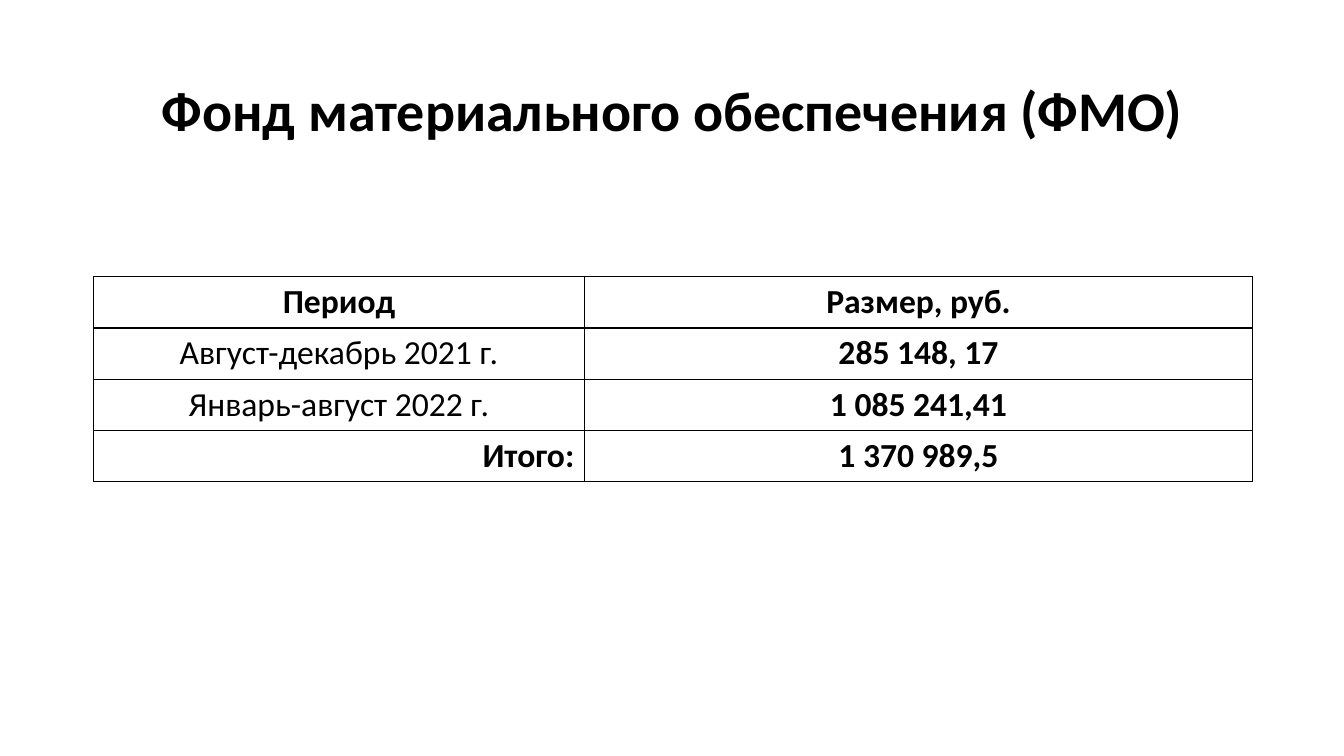
from lxml.etree import SubElement
from pptx import Presentation
from pptx.dml.color import RGBColor
from pptx.enum.text import MSO_ANCHOR as Anchor, PP_ALIGN as Align
from pptx.oxml.ns import qn
from pptx.util import Pt


def color(code):
    return RGBColor.from_string(code)


class Page:
    font = "Calibri"
    ink = "000000"
    paper = "FFFFFF"

    def __init__(self, deck):
        self.slide = deck.slides.add_slide(deck.slide_layouts[5])

    def label(self, frame, text, size, bold=True, align=Align.CENTER):
        para = frame.paragraphs[0]
        para.text = text
        para.alignment = align
        font = para.runs[0].font
        font.name, font.size, font.bold = self.font, Pt(size), bold
        font.color.rgb = color(self.ink)
        return para

    def title(self, text, left, top, width, height):
        box = self.slide.shapes.title
        box.left, box.top = Pt(left), Pt(top)
        box.width, box.height = Pt(width), Pt(height)
        frame = box.text_frame
        frame.word_wrap = True
        frame.vertical_anchor = Anchor.MIDDLE
        self.label(frame, text, 40).line_spacing = 0.9

    def border(self, cell):
        """Draw a thin solid line on all four sides of the cell."""
        props = cell._tc.get_or_add_tcPr()
        for spot, side in enumerate(("lnL", "lnR", "lnT", "lnB")):
            line = props.makeelement(qn(f"a:{side}"), {"w": str(Pt(1))})
            fill = SubElement(line, qn("a:solidFill"))
            SubElement(fill, qn("a:srgbClr"), val=self.ink)
            props.insert(spot, line)

    def table(self, rows, left, top, widths, height):
        """Add a table; each row is a list of (text, bold, align)."""
        grid = self.slide.shapes.add_table(
            len(rows), len(widths), Pt(left), Pt(top),
            Pt(sum(widths)), Pt(height * len(rows))).table
        for col, width in zip(grid.columns, widths):
            col.width = Pt(width)
        for r, row in enumerate(rows):
            grid.rows[r].height = Pt(height)
            for c, (text, bold, align) in enumerate(row):
                cell = grid.cell(r, c)
                cell.fill.solid()
                cell.fill.fore_color.rgb = color(self.paper)
                self.border(cell)
                self.label(cell.text_frame, text, 24, bold, align)


def main():
    deck = Presentation()
    deck.slide_width, deck.slide_height = Pt(960), Pt(540)
    page = Page(deck)
    page.title("Фонд материального обеспечения (ФМО)", 66, 28.75, 828, 104.4)
    mid, right = Align.CENTER, Align.RIGHT
    page.table([
        [("Период", True, mid), ("Размер, руб.", True, mid)],
        [("Август-декабрь 2021 г.", False, mid), ("285 148, 17", True, mid)],
        [("Январь-август 2022 г.", False, mid), ("1 085 241,41", True, mid)],
        [("Итого:", True, right), ("1 370 989,5", True, mid)],
    ], 66.8, 197.7, (350.6, 477.4), 36.6)
    deck.save("out.pptx")


if __name__ == "__main__":
    main()
